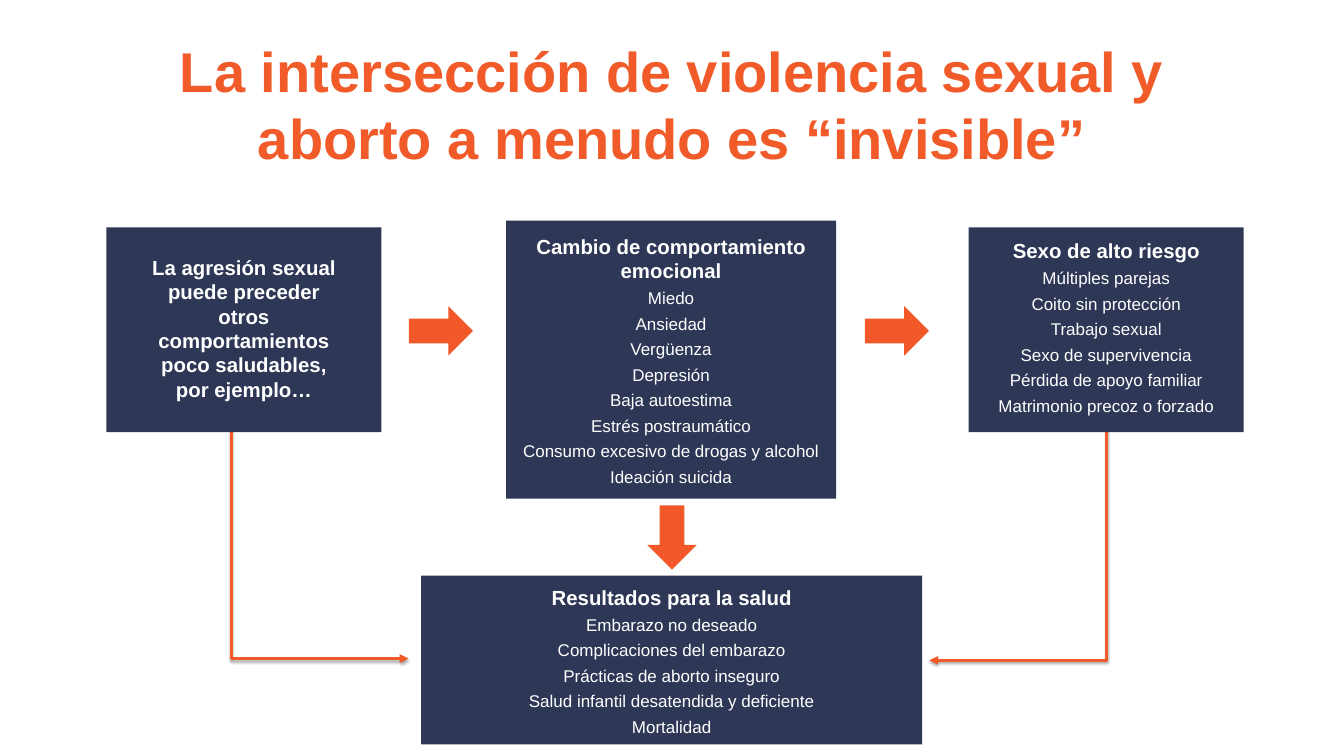
from lxml import etree
from pptx import Presentation
from pptx.dml.color import RGBColor
from pptx.enum.shapes import MSO_CONNECTOR, MSO_SHAPE
from pptx.enum.text import PP_ALIGN
from pptx.oxml import parse_xml
from pptx.oxml.ns import qn
from pptx.util import Inches, Pt

RECT, ARROW = MSO_SHAPE.RECTANGLE, MSO_SHAPE.RIGHT_ARROW
ELBOW, CENTER = MSO_CONNECTOR.ELBOW, PP_ALIGN.CENTER
A_NS = "http://schemas.openxmlformats.org/drawingml/2006/main"
FONT = "Arial"
COLORS = {"title": "F15A29", "arrow": "F15928", "panel": "2E3856", "text": "FFFFFF"}
LINE_SHADOW = (
    f'<a:effectLst xmlns:a="{A_NS}">'
    '<a:outerShdw blurRad="40000" dist="23000" dir="5400000" rotWithShape="0">'
    '<a:srgbClr val="000000"><a:alpha val="35000"/></a:srgbClr>'
    '</a:outerShdw></a:effectLst>'
)

TITLE = "La intersección de violencia sexual y aborto a menudo es “invisible”"
PANELS = [
    ((6.89, 9.42, 8.2, 2.76), (0.28, 0.1), "Resultados para la salud",
     ["Embarazo no deseado", "Complicaciones del embarazo",
      "Prácticas de aborto inseguro", "Salud infantil desatendida y deficiente",
      "Mortalidad"]),
    ((1.74, 3.72, 4.5, 3.35), (0.58, 0.4),
     "La agresión sexual puede preceder otros comportamientos poco saludables, "
     "por ejemplo…", []),
    ((15.85, 3.72, 4.5, 3.35), (0, 0.13), "Sexo de alto riesgo",
     ["Múltiples parejas", "Coito sin protección", "Trabajo sexual",
      "Sexo de supervivencia", "Pérdida de apoyo familiar",
      "Matrimonio precoz o forzado"]),
    ((8.28, 3.61, 5.4, 4.55), (0.08, 0.17), "Cambio de comportamiento emocional",
     ["Miedo", "Ansiedad", "Vergüenza", "Depresión", "Baja autoestima",
      "Estrés postraumático", "Consumo excesivo de drogas y alcohol",
      "Ideación suicida"]),
]
ARROWS = [(6.69, 5.01, 0), (14.15, 5.01, 0), (10.47, 8.39, 90)]
ELBOWS = [(3.34, 7.43, 270, True), (14.76, 7.46, 90, False)]


def color(name):
    """Return a palette colour."""
    return RGBColor.from_string(COLORS[name])


def add_filled(s, kind, box, fill):
    """Add a flat preset shape without outline."""
    sp = s.shapes.add_shape(kind, *map(Inches, box))
    sp.shadow.inherit = False
    sp.fill.solid()
    sp.fill.fore_color.rgb = color(fill)
    sp.line.fill.background()
    return sp


def add_text(s, box, lines, fill):
    """Add a text box of centred (text, size, bold) lines."""
    tf = s.shapes.add_textbox(*map(Inches, box)).text_frame
    tf.word_wrap = True
    for i, (text, size, bold) in enumerate(lines):
        p = tf.add_paragraph() if i else tf.paragraphs[0]
        p.text = text
        p.alignment = CENTER
        if i:
            p.space_before = Pt(6)
        p.font.name, p.font.size, p.font.bold = FONT, Pt(size), bold
        p.font.color.rgb = color(fill)
    return tf


def add_title(s, box):
    """Add the slide title."""
    tf = add_text(s, box, [(TITLE, 66, True)], "title")
    tf.margin_left = tf.margin_right = Inches(0.1)
    tf.margin_top = tf.margin_bottom = Inches(0.1)


def add_panel(s, box, pad, heading, items):
    """Add a dark panel with a bold heading and its items."""
    x, y, w, h = box
    dx, dy = pad
    add_filled(s, RECT, box, "panel")
    lines = [(heading, 24, True)] + [(item, 20, False) for item in items]
    add_text(s, (x + dx, y + dy, w - 2 * dx, h - 2 * dy), lines, "text")


def add_elbow(s, box, angle, flip):
    """Add a one-bend arrow, turned within its box."""
    x, y, w, h = box
    cxn = s.shapes.add_connector(ELBOW, *map(Inches, (x, y, x + w, y + h)))
    cxn.line.color.rgb = color("arrow")
    cxn.line.width = Pt(3.5)
    sp_pr = cxn._element.spPr
    xfrm = sp_pr.find(qn("a:xfrm"))
    xfrm.set("rot", str(angle * 60000))
    if flip:
        xfrm.set("flipH", "1")
    sp_pr.find(qn("a:prstGeom")).set("prst", "bentConnector2")
    etree.SubElement(sp_pr.find(qn("a:ln")), qn("a:tailEnd"), type="triangle")
    sp_pr.append(parse_xml(LINE_SHADOW))


def add_flow(s):
    """Add the panels and the arrows between them."""
    for x, y, angle, flip in ELBOWS:
        add_elbow(s, (x, y, 3.79, 2.9), angle, flip)
    for panel in PANELS:
        add_panel(s, *panel)
    for x, y, angle in ARROWS:
        add_filled(s, ARROW, (x, y, 1.05, 0.81), "arrow").rotation = angle


def main():
    """Build and save the slide."""
    prs = Presentation()
    prs.slide_width, prs.slide_height = Inches(21.99), Inches(12.37)
    s = prs.slides.add_slide(prs.slide_layouts[6])
    add_flow(s)
    add_title(s, (2.58, 0.49, 16.83, 3.02))
    prs.save("out.pptx")


if __name__ == "__main__":
    main()
